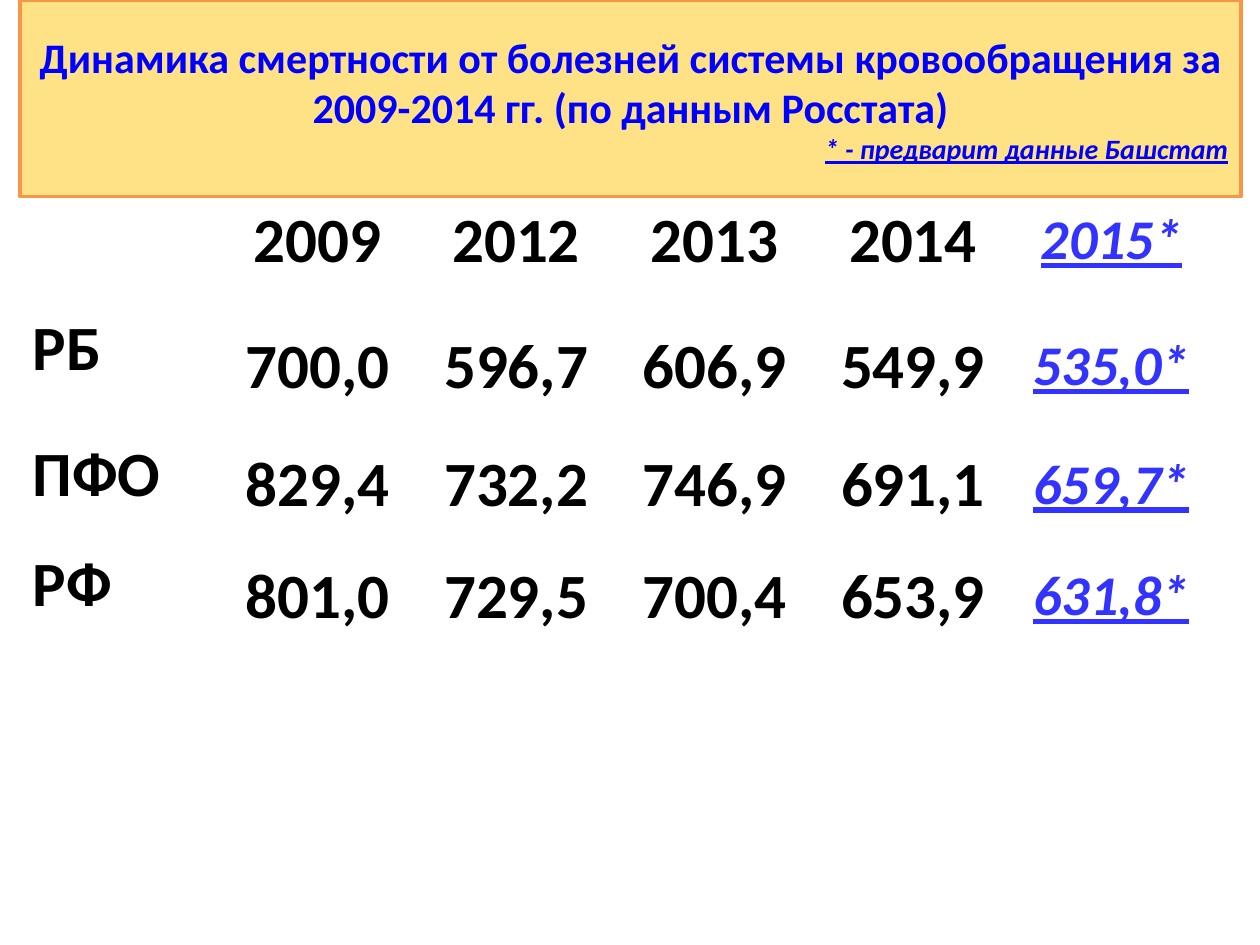
from lxml.etree import SubElement
from pptx import Presentation
from pptx.dml.color import RGBColor
from pptx.enum.text import MSO_ANCHOR, PP_ALIGN
from pptx.oxml.ns import qn
from pptx.util import Inches, Pt

W, H = 10, 7.5
FONT = "Calibri"
COLORS = {"scroll": "FFE285", "edge": "F79646", "title": "0000FF",
          "text": "000000", "forecast": "3333FF"}
TITLE = [
    ("Динамика смертности от болезней системы кровообращения "
     "за 2009-2014 гг. (по данным Росстата)", 24, PP_ALIGN.CENTER, False),
    ("* - предварит данные Башстат", 16, PP_ALIGN.RIGHT, True),
]
RATES = [
    ["", "2009", "2012", "2013", "2014", "2015*"],
    ["РБ", "700,0", "596,7", "606,9", "549,9", "535,0*"],
    ["ПФО", "829,4", "732,2", "746,9", "691,1", "659,7*"],
    ["РФ", "801,0", "729,5", "700,4", "653,9", "631,8*"],
]
ROW_HEIGHTS = [1, 1, 0.88, 0.89]


def rgb(name):
    return RGBColor.from_string(COLORS[name])


def write(p, text, size, color, align, accent):
    p.text = text
    p.alignment = align
    for r in p.runs:
        r.font.name = FONT
        r.font.size = Pt(size)
        r.font.bold = True
        r.font.italic = accent
        r.font.underline = accent
        r.font.color.rgb = rgb(color)


def add_rates_table(s, x, y, w, row_heights):
    n_cols = len(RATES[0])
    frame = s.shapes.add_table(len(RATES), n_cols, Inches(x), Inches(y),
                               Inches(w), Inches(sum(row_heights)))
    table = frame.table
    for col in table.columns:
        col.width = Inches(w / n_cols)
    for row, height in zip(table.rows, row_heights):
        row.height = Inches(height)
    for i, values in enumerate(RATES):
        for j, value in enumerate(values):
            cell = table.cell(i, j)
            cell.fill.background()
            if not value:
                continue
            forecast = j == n_cols - 1
            cell.vertical_anchor = MSO_ANCHOR.MIDDLE if j else MSO_ANCHOR.TOP
            write(cell.text_frame.paragraphs[0], value,
                  32 if forecast else 36, "forecast" if forecast else "text",
                  PP_ALIGN.CENTER if j else PP_ALIGN.LEFT, forecast)


def add_title_scroll(s, x, y, w, h):
    sp = s.shapes.title
    sp.left, sp.top, sp.width, sp.height = map(Inches, (x, y, w, h))
    geom = SubElement(sp.element.spPr, qn("a:prstGeom"), prst="horizontalScroll")
    SubElement(geom, qn("a:avLst"))
    sp.fill.solid()
    sp.fill.fore_color.rgb = rgb("scroll")
    sp.line.color.rgb = rgb("edge")
    sp.line.width = Pt(2)
    tf = sp.text_frame
    tf.word_wrap = True
    tf.vertical_anchor = MSO_ANCHOR.MIDDLE
    for i, (text, size, align, accent) in enumerate(TITLE):
        p = tf.add_paragraph() if i else tf.paragraphs[0]
        write(p, text, size, "title", align, accent)
    s.shapes.element.append(sp.element)


def main():
    prs = Presentation()
    prs.slide_width, prs.slide_height = Inches(W), Inches(H)
    s = prs.slides.add_slide(prs.slide_layouts.get_by_name("Title Only"))
    margin = 0.016 * W
    add_rates_table(s, margin, 0.188 * H, 0.945 * W, ROW_HEIGHTS)
    add_title_scroll(s, margin, 0, 0.969 * W, 0.208 * H)
    prs.save("out.pptx")


if __name__ == "__main__":
    main()
